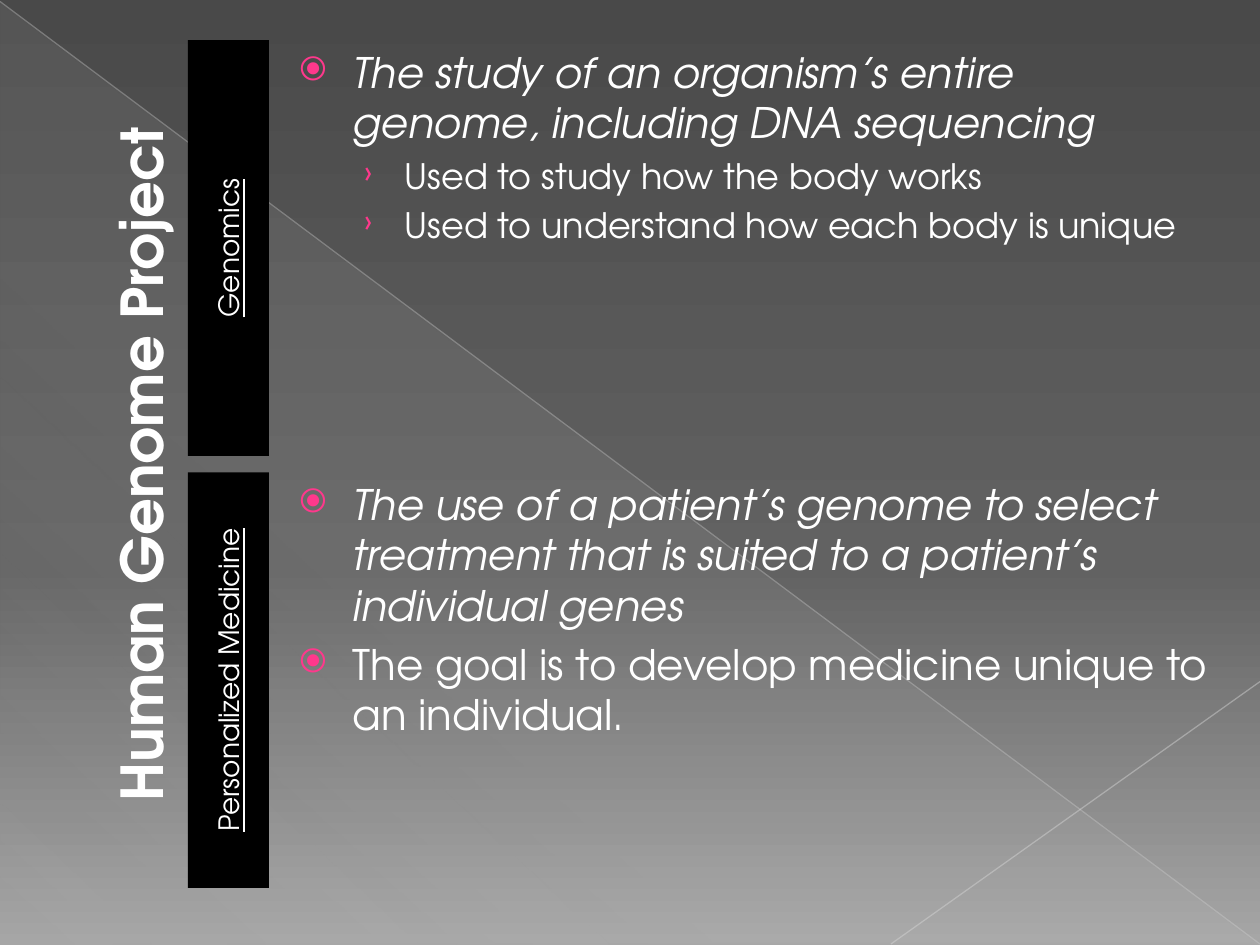
from dataclasses import dataclass

from lxml.etree import SubElement
from pptx import Presentation
from pptx.dml.color import RGBColor
from pptx.enum.shapes import MSO_CONNECTOR, MSO_SHAPE
from pptx.enum.text import MSO_ANCHOR, PP_ALIGN
from pptx.oxml.ns import qn
from pptx.util import Cm, Pt


@dataclass(frozen=True)
class Theme:
    font: str = "TeX Gyre Adventor"
    text: str = "FFFFFF"
    label: str = "000000"
    accent: str = "FF388C"
    backdrop: tuple = ((0, "494949", 100), (60, "626262", 100), (100, "A6A6A6", 100))
    sheen: tuple = ((0, "D2D2D2", 10), (70, "D2D2D2", 8), (100, "D2D2D2", 1))
    falling_line: tuple = ("D1D1D1", 35)
    rising_line: tuple = ("D6D6D6", 45)
    title_size: int = 33
    label_size: int = 16


@dataclass(frozen=True)
class Box:
    left: float
    top: float
    width: float
    height: float

    def lengths(self):
        return Cm(self.left), Cm(self.top), Cm(self.width), Cm(self.height)

    def turned(self):
        shift = (self.width - self.height) / 2
        return Box(self.left + shift, self.top - shift, self.height, self.width)


@dataclass(frozen=True)
class Level:
    size: int
    margin: float
    hanging: float
    space: float
    bullet: str
    bullet_percent: int


THEME = Theme()
LEVELS = (
    Level(24, 1.24, 1.07, 4.8, "⦿", 80),
    Level(20, 2.29, 0.81, 4, "›", 95),
)
SECTIONS = (
    ("Genomics", (
        (0, "The study of an organism’s entire genome, including DNA sequencing", True),
        (1, "Used to study how the body works", False),
        (1, "Used to understand how each body is unique", False),
    )),
    ("Personalized Medicine", (
        (0, "The use of a patient’s genome to select treatment that is suited "
            "to a patient’s individual genes", True),
        (0, "The goal is to develop medicine unique to an individual.", False),
    )),
)


def add_child(parent, tag, **attributes):
    return SubElement(parent, qn(tag), attributes)


def set_alpha(color, percent):
    add_child(color, "a:alpha", val=str(percent * 1000))


def paint_gradient(owner, fill, stops, angle):
    fill.gradient()
    gradient = owner.element.find(".//" + qn("a:gradFill"))
    gradient.find(qn("a:lin")).set("ang", str(angle * 60000))
    stop_list = gradient.find(qn("a:gsLst"))
    for old_stop in list(stop_list):
        stop_list.remove(old_stop)
    for position, color, percent in stops:
        stop = add_child(stop_list, "a:gs", pos=str(position * 1000))
        set_alpha(add_child(stop, "a:srgbClr", val=color), percent)


def add_span(para, text, size, bold=None, italic=None, underline=None):
    span = para.add_run()
    span.text = text
    font = span.font
    font.name, font.size = THEME.font, Pt(size)
    font.bold, font.italic, font.underline = bold, italic, underline
    font.color.rgb = RGBColor.from_string(THEME.text)


def set_bullet(para, level):
    properties = para._p.get_or_add_pPr()
    properties.set("marL", str(Cm(level.margin)))
    properties.set("indent", str(-Cm(level.hanging)))
    color = add_child(properties, "a:buClr")
    add_child(color, "a:srgbClr", val=THEME.accent)
    add_child(properties, "a:buSzPct", val=str(level.bullet_percent * 1000))
    add_child(properties, "a:buFont", typeface=THEME.font)
    add_child(properties, "a:buChar", char=level.bullet)


def add_ray(page, start, end, style):
    color, percent = style
    ray = page.shapes.add_connector(
        MSO_CONNECTOR.STRAIGHT, *(Cm(value) for value in start + end))
    ray.line.width = Pt(0.75)
    ray.line.color.rgb = RGBColor.from_string(color)
    set_alpha(ray.element.find(".//" + qn("a:ln")).find(".//" + qn("a:srgbClr")), percent)
    add_child(ray.element.spPr, "a:effectLst")


def draw_backdrop(page, box):
    paint_gradient(page, page.background.fill, THEME.backdrop, 90)
    sheen = page.shapes.add_shape(MSO_SHAPE.RIGHT_TRIANGLE, *box.lengths())
    sheen.shadow.inherit = False
    sheen.line.fill.background()
    paint_gradient(sheen, sheen.fill, THEME.sheen, 133)
    right, bottom = box.left + box.width, box.top + box.height
    add_ray(page, (box.left, box.top), (right, bottom), THEME.falling_line)
    add_ray(page, (right, box.top + 13.71), (box.left + 17.96, bottom), THEME.rising_line)


def fill_upright(shape, text, size, anchor, **style):
    shape.rotation = 270
    frame = shape.text_frame
    frame.word_wrap = True
    frame.vertical_anchor = anchor
    para = frame.paragraphs[0]
    para.alignment = PP_ALIGN.CENTER
    add_span(para, text, size, **style)


def draw_title(page, box):
    title = page.shapes.add_textbox(*box.turned().lengths())
    fill_upright(title, "Human Genome Project", THEME.title_size, MSO_ANCHOR.BOTTOM, bold=True)


def draw_label(page, box, text):
    label = page.shapes.add_shape(MSO_SHAPE.RECTANGLE, *box.turned().lengths())
    label.shadow.inherit = False
    label.fill.solid()
    label.fill.fore_color.rgb = RGBColor.from_string(THEME.label)
    label.line.fill.background()
    fill_upright(label, text, THEME.label_size, MSO_ANCHOR.MIDDLE, underline=True)


def draw_points(page, box, points):
    frame = page.shapes.add_textbox(*box.lengths()).text_frame
    frame.word_wrap = True
    for index, (depth, text, italic) in enumerate(points):
        para = frame.add_paragraph() if index else frame.paragraphs[0]
        level = LEVELS[depth]
        para.level = depth
        para.space_before = Pt(level.space if index else 0)
        set_bullet(para, level)
        add_span(para, text, level.size, italic=italic)


def draw_section(page, box, label, points):
    draw_label(page, Box(box.left, box.top, 1.63, box.height), label)
    offset = 1.83
    draw_points(
        page, Box(box.left + offset, box.top, box.width - offset, box.height), points)


def main():
    deck = Presentation()
    deck.slide_width, deck.slide_height = Cm(25.4), Cm(19.05)
    page = deck.slides.add_slide(deck.slide_layouts[6])
    draw_backdrop(page, Box(0, 0.03, 25.4, 19))
    draw_title(page, Box(0.69, 0.81, 2.97, 17.09))
    height, gap = 8.38, 0.33
    for index, (label, points) in enumerate(SECTIONS):
        box = Box(3.79, 0.81 + index * (height + gap), 20.88, height)
        draw_section(page, box, label, points)
    deck.save("out.pptx")


if __name__ == "__main__":
    main()
